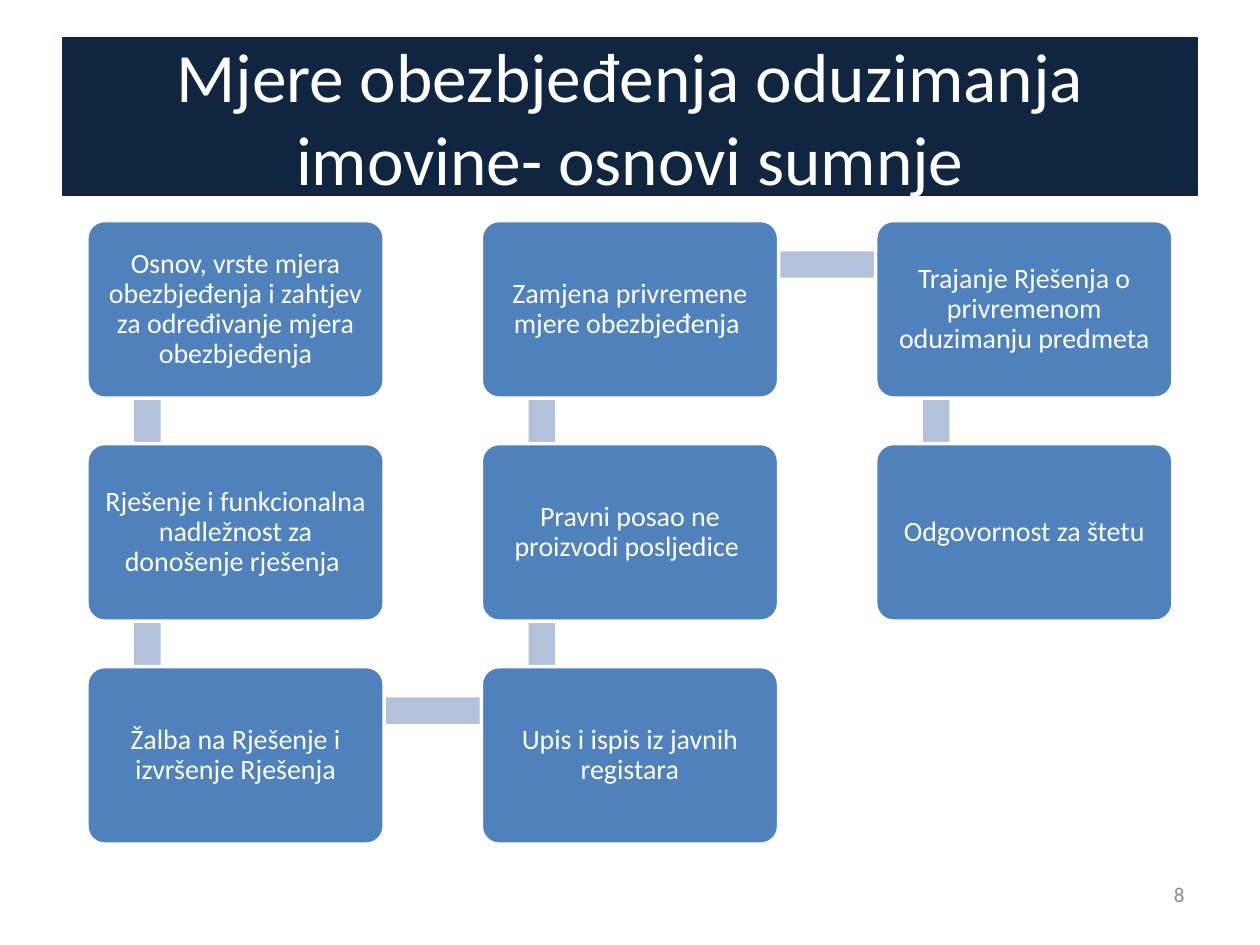
from math import atan2, degrees, hypot

from pptx import Presentation
from pptx.dml.color import RGBColor
from pptx.enum.shapes import MSO_SHAPE
from pptx.enum.text import MSO_ANCHOR, MSO_AUTO_SIZE, PP_ALIGN
from pptx.util import Inches, Pt

NAVY, BLUE, PALE, WHITE, GRAY = "10253F", "4F81BD", "B3C1DB", "FFFFFF", "8C8C8C"
LEFT, TOP = 0.69, 1.75
COLUMN_STEP, ROW_STEP = 3.13, 1.77
BOX_WIDTH, BOX_HEIGHT = 2.36, 1.41
BAR_INSET_X, BAR_INSET_Y, BAR_THICKNESS = 0.48, 0.35, 0.21
ROWS = 3
STEPS = [
    "Osnov, vrste mjera obezbjeđenja i zahtjev za određivanje mjera obezbjeđenja",
    "Rješenje i funkcionalna nadležnost za donošenje rješenja ",
    "Žalba na Rješenje i izvršenje Rješenja",
    "Upis i ispis iz javnih registara",
    "Pravni posao ne proizvodi posljedice ",
    "Zamjena privremene mjere obezbjeđenja ",
    "Trajanje Rješenja o privremenom oduzimanju predmeta",
    "Odgovornost za štetu",
]


def color(value):
    return RGBColor.from_string(value)


def set_values(target, values):
    for name, value in values.items():
        setattr(target, name, value)


def step_position(index):
    column, row = divmod(index, ROWS)
    if column % 2:
        row = ROWS - 1 - row
    return LEFT + column * COLUMN_STEP, TOP + row * ROW_STEP


class SlideBuilder:
    font_name = "Calibri"

    def __init__(self, deck):
        self.slide = deck.slides.add_slide(deck.slide_layouts[5])

    def paint(self, shape, fill, line=None, width=0):
        shape.fill.solid()
        shape.fill.fore_color.rgb = color(fill)
        if line:
            shape.line.color.rgb = color(line)
            shape.line.width = Pt(width)
        else:
            shape.line.fill.background()

    def label(self, shape, text, size, text_color, inset=None, **paragraph_format):
        frame = shape.text_frame
        set_values(frame, {"word_wrap": True, "auto_size": MSO_AUTO_SIZE.NONE,
                           "vertical_anchor": MSO_ANCHOR.MIDDLE})
        if inset is not None:
            sides = ("left", "top", "right", "bottom")
            set_values(frame, {f"margin_{side}": Inches(inset) for side in sides})
        para = frame.paragraphs[0]
        set_values(para, {"alignment": PP_ALIGN.CENTER, **paragraph_format})
        span = para.add_run()
        span.text = text
        set_values(span.font, {"name": self.font_name, "size": Pt(size)})
        span.font.color.rgb = color(text_color)

    def title(self, text):
        title = self.slide.shapes.title
        set_values(title, {"left": Inches(0.5), "top": Inches(0.3),
                           "width": Inches(9), "height": Inches(1.25)})
        self.paint(title, NAVY, NAVY, 0.75)
        self.label(title, text, 39.6, WHITE)

    def page_number(self, text):
        box = self.slide.shapes.add_textbox(
            Inches(7.17), Inches(6.9), Inches(2.33), Inches(0.4))
        self.label(box, text, 12, GRAY, alignment=PP_ALIGN.RIGHT)

    def bar(self, start, end):
        across, down = end[0] - start[0], end[1] - start[1]
        length = hypot(across, down)
        center_x = start[0] + across / 2 + BAR_INSET_X
        center_y = start[1] + down / 2 + BAR_INSET_Y
        bar = self.slide.shapes.add_shape(
            MSO_SHAPE.RECTANGLE, Inches(center_x - length / 2),
            Inches(center_y - BAR_THICKNESS / 2), Inches(length), Inches(BAR_THICKNESS))
        bar.rotation = degrees(atan2(down, across)) % 360
        bar.shadow.inherit = False
        self.paint(bar, PALE)

    def step(self, position, text):
        left, top = position
        box = self.slide.shapes.add_shape(
            MSO_SHAPE.ROUNDED_RECTANGLE, Inches(left), Inches(top),
            Inches(BOX_WIDTH), Inches(BOX_HEIGHT))
        box.adjustments[0] = 0.1
        box.shadow.inherit = False
        self.paint(box, BLUE, WHITE, 2)
        self.label(box, text, 16, WHITE, inset=0.07, line_spacing=0.9)


def main():
    deck = Presentation()
    set_values(deck, {"slide_width": Inches(10), "slide_height": Inches(7.5)})
    builder = SlideBuilder(deck)
    builder.title("Mjere obezbjeđenja oduzimanja imovine- osnovi sumnje")
    builder.page_number("8")
    positions = [step_position(index) for index in range(len(STEPS))]
    for start, end in zip(positions, positions[1:]):
        builder.bar(start, end)
    for position, text in zip(positions, STEPS):
        builder.step(position, text)
    deck.save("out.pptx")


if __name__ == "__main__":
    main()
